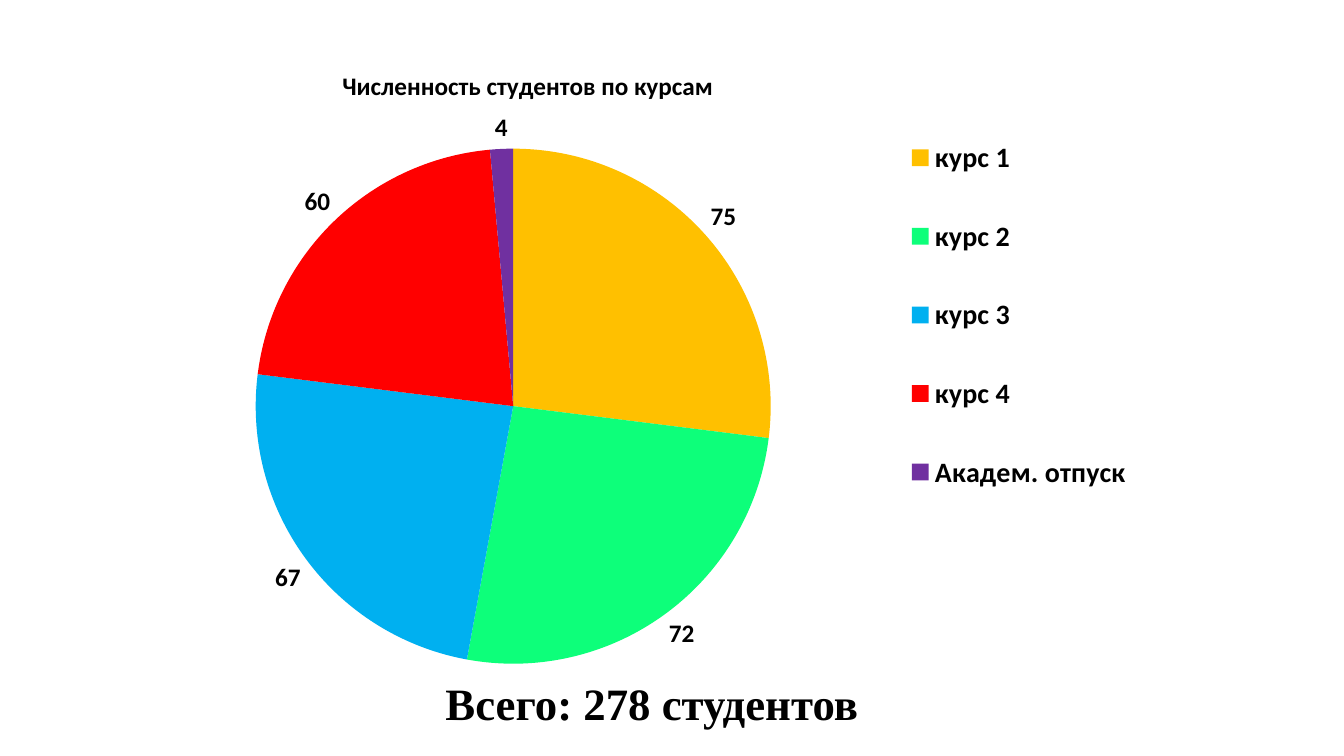
from lxml.etree import SubElement
from pptx import Presentation
from pptx.chart.data import CategoryChartData
from pptx.dml.color import RGBColor
from pptx.enum.chart import XL_CHART_TYPE, XL_LABEL_POSITION, XL_LEGEND_POSITION
from pptx.enum.text import MSO_AUTO_SIZE, PP_ALIGN
from pptx.oxml import parse_xml
from pptx.oxml.ns import nsdecls, qn
from pptx.util import Cm, Pt

COLORS = {
    "text": "000000",
    "курс 1": "FFC000",
    "курс 2": "0DFF7A",
    "курс 3": "00B0F0",
    "курс 4": "FF0000",
    "Академ. отпуск": "7030A0",
}
STUDENTS = {"курс 1": 75, "курс 2": 72, "курс 3": 67, "курс 4": 60, "Академ. отпуск": 4}


def set_attrs(obj, values):
    """Set each named attribute of an object."""
    for name, value in values.items():
        setattr(obj, name, value)


class SlideBuilder:
    """Hold the slide and its style, and add elements to it."""

    def __init__(self, slide):
        """Keep the current slide."""
        self.slide = slide

    def font(self, font, size, name="Calibri"):
        """Apply the bold text style to a font."""
        set_attrs(font, {"name": name, "size": Pt(size), "bold": True})
        font.color.rgb = RGBColor.from_string(COLORS["text"])

    def place(self, element, **fractions):
        """Place a chart part at fractions of the chart area."""
        for old in element.findall(qn("c:layout")):
            element.remove(old)
        layout = parse_xml(f"<c:layout {nsdecls('c')}/>")
        manual = SubElement(layout, qn("c:manualLayout"))
        if element.tag == qn("c:plotArea"):
            SubElement(manual, qn("c:layoutTarget"), val="inner")
        for mode in ("xMode", "yMode"):
            SubElement(manual, qn(f"c:{mode}"), val="edge")
        for key, value in fractions.items():
            SubElement(manual, qn(f"c:{key}"), val=str(value))
        overlay = element.find(qn("c:overlay"))
        if overlay is None:
            element.insert(0, layout)
        else:
            overlay.addprevious(layout)

    def text(self, text, left, top, width, height, size, name):
        """Add a centred line of text."""
        sp = self.slide.shapes.add_textbox(Cm(left), Cm(top), Cm(width), Cm(height))
        tf = sp.text_frame
        set_attrs(tf, {"word_wrap": False, "auto_size": MSO_AUTO_SIZE.SHAPE_TO_FIT_TEXT})
        p = tf.paragraphs[0]
        set_attrs(p, {"alignment": PP_ALIGN.CENTER, "line_spacing": 1.15, "space_after": Pt(10)})
        r = p.add_run()
        r.text = text
        self.font(r.font, size, name)

    def pie(self, title, values, left, top, width, height):
        """Add a pie chart with a title, value labels and a legend."""
        data = CategoryChartData()
        data.categories = list(values)
        data.add_series("Студенты", list(values.values()))
        chart = self.slide.shapes.add_chart(
            XL_CHART_TYPE.PIE, Cm(left), Cm(top), Cm(width), Cm(height), data
        ).chart
        self.font(chart.font, 10)

        chart.has_title = True
        tf = chart.chart_title.text_frame
        tf.text = title
        self.font(tf.paragraphs[0].runs[0].font, 18)
        chart.chart_title.include_in_layout = False
        self.place(chart.chart_title._element, x=0.22, y=0.05)

        chart.has_legend = True
        set_attrs(chart.legend, {"position": XL_LEGEND_POSITION.RIGHT, "include_in_layout": False})
        self.font(chart.legend.font, 20)
        self.place(chart.legend._element, x=0.77, y=0.1, w=0.22, h=0.67)

        plot = chart.plots[0]
        set_attrs(plot, {"vary_by_categories": True, "has_data_labels": True})
        labels = plot.data_labels
        set_attrs(labels, {"show_value": True, "show_percentage": False,
                           "position": XL_LABEL_POSITION.OUTSIDE_END})
        self.font(labels.font, 18)
        self.place(plot._element.getparent(), x=0.14, y=0.18, w=0.5, h=0.79)

        for i, course in enumerate(values):
            fill = plot.series[0].points[i].format.fill
            fill.solid()
            fill.fore_color.rgb = RGBColor.from_string(COLORS[course])


def main():
    """Build the slide and save it."""
    prs = Presentation()
    set_attrs(prs, {"slide_width": Cm(33.87), "slide_height": Cm(19.05)})
    s = SlideBuilder(prs.slides.add_slide(prs.slide_layouts[6]))
    s.text(f"Всего: {sum(STUDENTS.values())} студентов", 10.92, 16.71, 11.02, 1.73, 32, "Times New Roman")
    s.pie("Численность студентов по курсам", STUDENTS, 2.79, 0.79, 26.01, 16.43)
    prs.save("out.pptx")


if __name__ == "__main__":
    main()
